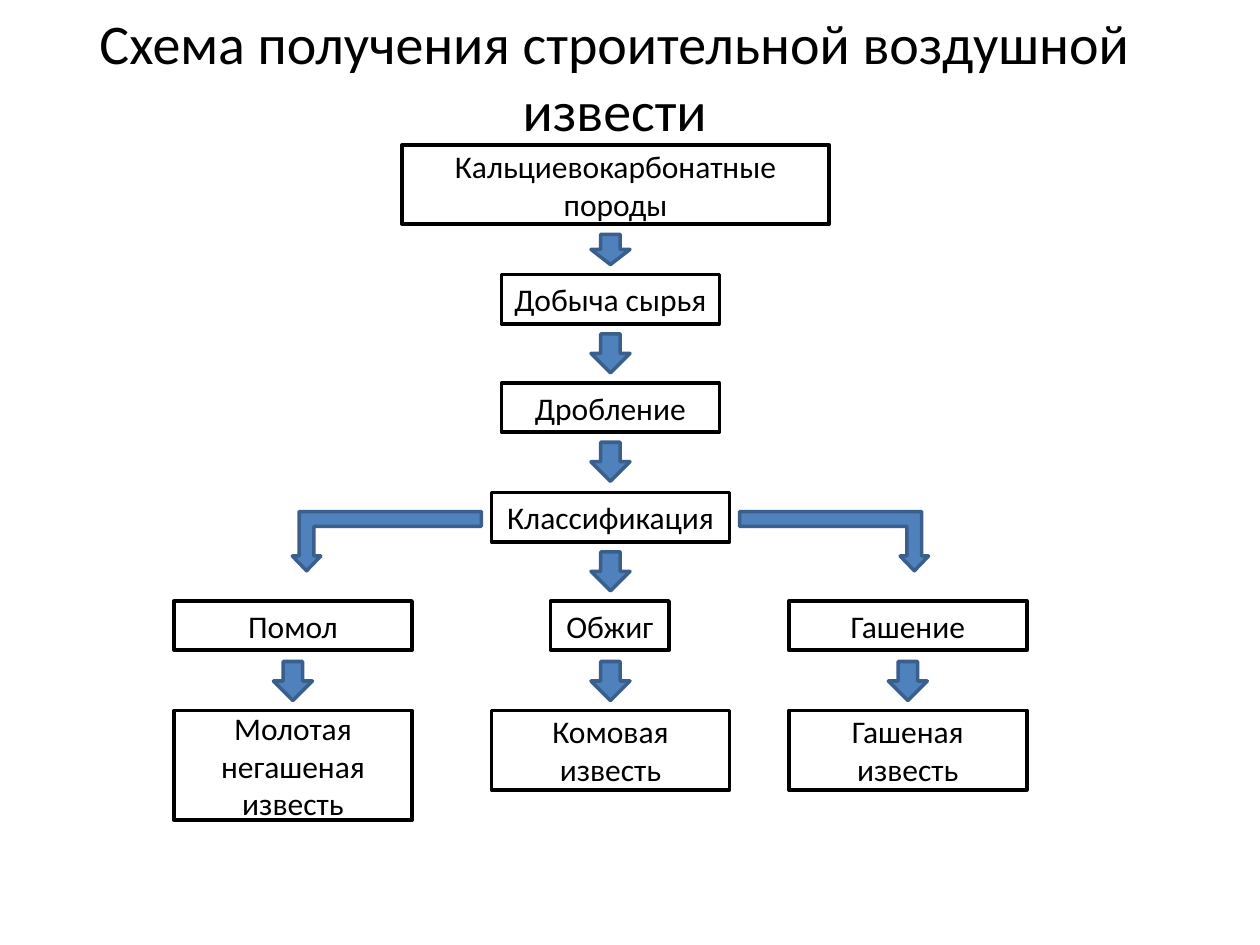
"""Build a flow chart of how building lime is made."""
from pptx import Presentation
from pptx.dml.color import RGBColor
from pptx.enum.shapes import MSO_SHAPE
from pptx.enum.text import MSO_ANCHOR, PP_ALIGN
from pptx.oxml.ns import qn
from pptx.util import Inches, Pt

BLACK = RGBColor(0x00, 0x00, 0x00)
BLUE = RGBColor(0x4F, 0x81, 0xBD)
NAVY = RGBColor(0x3A, 0x5F, 0x8C)

deck = Presentation()
deck.slide_width = Inches(10)
deck.slide_height = Inches(7.5)
slide = deck.slides.add_slide(deck.slide_layouts[6])


def write(shape, text, size):
    frame = shape.text_frame
    frame.word_wrap = True
    frame.vertical_anchor = MSO_ANCHOR.MIDDLE
    line = frame.paragraphs[0]
    line.text = text
    line.alignment = PP_ALIGN.CENTER
    line.font.name = "Calibri"
    line.font.size = Pt(size)
    line.font.color.rgb = BLACK


def draw(kind, left, top, width, height, color):
    shape = slide.shapes.add_shape(
        kind, Inches(left), Inches(top), Inches(width), Inches(height))
    shape.shadow.inherit = False
    shape.line.color.rgb = color
    shape.line.width = Pt(2)
    return shape


title = slide.shapes.add_textbox(
    Inches(0.43), Inches(0.13), Inches(8.9), Inches(0.94))
write(title, "Схема получения строительной воздушной извести", 32)

boxes = [
    ("Кальциевокарбонатные породы", 3.19, 1.15, 3.39, 0.63),
    ("Добыча сырья", 3.98, 2.18, 1.73, 0.39),
    ("Дробление", 3.98, 3.04, 1.73, 0.39),
    ("Классификация", 3.9, 3.91, 1.89, 0.39),
    ("Помол", 1.38, 4.77, 1.89, 0.39),
    ("Обжиг", 4.37, 4.77, 0.94, 0.39),
    ("Гашение", 6.26, 4.77, 1.89, 0.39),
    ("Молотая негашеная известь", 1.38, 5.64, 1.89, 0.87),
    ("Комовая известь", 3.9, 5.64, 1.89, 0.63),
    ("Гашеная известь", 6.26, 5.64, 1.89, 0.63),
]
for text, left, top, width, height in boxes:
    box = draw(MSO_SHAPE.RECTANGLE, left, top, width, height, BLACK)
    box.fill.background()
    write(box, text, 18)

arrows = [(4.69, 1.86, 0.24)]
arrows += [(4.69, top, 0.31) for top in (2.65, 3.51, 4.38)]
arrows += [(left, 5.25, 0.31) for left in (2.17, 4.69, 7.05)]
for left, top, height in arrows:
    arrow = draw(MSO_SHAPE.DOWN_ARROW, left, top, 0.31, height, NAVY)
    arrow.fill.solid()
    arrow.fill.fore_color.rgb = BLUE

for left, flip in ((2.32, "0"), (5.87, "1")):
    bend = draw(MSO_SHAPE.BENT_UP_ARROW, left, 4.06, 1.5, 0.47, NAVY)
    bend.fill.solid()
    bend.fill.fore_color.rgb = BLUE
    bend.adjustments[1] = 0.24
    bend.rotation = 180
    bend.element.spPr.find(qn("a:xfrm")).set("flipH", flip)

deck.save("out.pptx")
